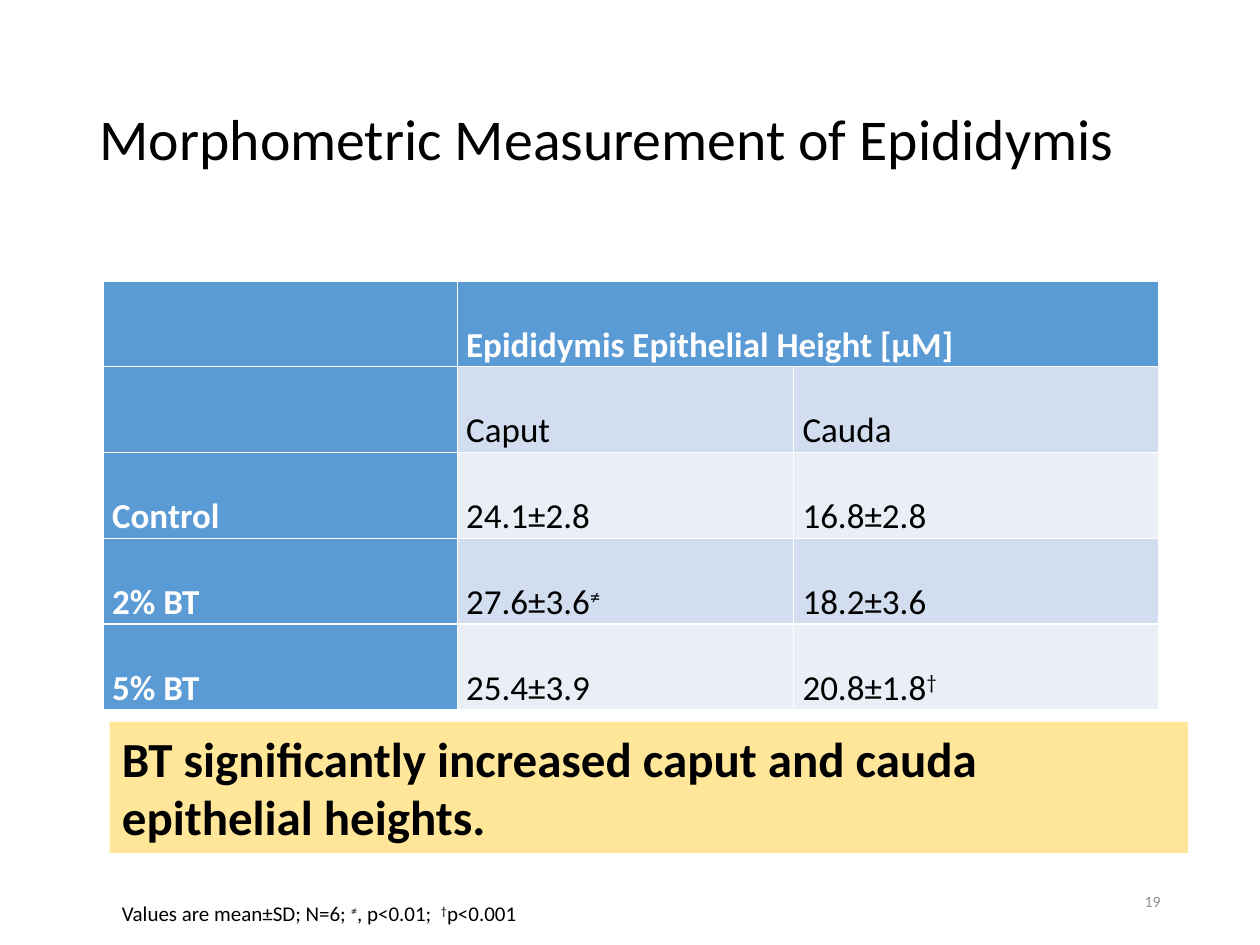
"""Build the slide on epididymis epithelial heights."""
from itertools import groupby

from pptx import Presentation
from pptx.dml.color import RGBColor
from pptx.enum.shapes import MSO_SHAPE
from pptx.enum.text import MSO_ANCHOR as Anchor, MSO_AUTO_SIZE as AutoSize, PP_ALIGN as Align
from pptx.util import Inches, Pt

TITLE = "Morphometric Measurement of Epididymis"
ROWS = [
    ["", "Epididymis Epithelial Height [µM]", ""],
    ["", "Caput", "Cauda"],
    ["Control", "24.1±2.8", "16.8±2.8"],
    ["2% BT", "27.6±3.6≠", "18.2±3.6"],
    ["5% BT", "25.4±3.9", "20.8±1.8†"],
]
CONCLUSION = "BT significantly increased caput and cauda epithelial heights."
FOOTNOTE = "Values are mean±SD; N=6; ≠, p<0.01;  †p<0.001"
PAGE_NUMBER = "19"
MARKS = "≠†"

COLUMN_WIDTHS = [2.81, 2.67, 2.9]
ROW_HEIGHT = 0.68
HEADING_FILL = "5B9BD5"
BAND_FILLS = ["EAEFF7", "D2DEEF"]


def rgb(value):
    """Turn a hex string into a colour."""
    return RGBColor.from_string(value)


def fill(part, value):
    """Give a shape or cell a solid fill."""
    part.fill.solid()
    part.fill.fore_color.rgb = rgb(value)


def write(frame, text, size, color="000000", bold=False, align=Align.LEFT,
          anchor=Anchor.TOP, spacing=1.0):
    """Write one paragraph, raising the significance marks."""
    frame.word_wrap = True
    frame.vertical_anchor = anchor
    paragraph = frame.paragraphs[0]
    paragraph.alignment = align
    paragraph.line_spacing = spacing
    for raised, letters in groupby(text, lambda letter: letter in MARKS):
        run = paragraph.add_run()
        run.text = "".join(letters)
        font = run.font
        font.name, font.size, font.bold = "Calibri", Pt(size), bold
        font.color.rgb = rgb(color)
        if raised:
            run._r.get_or_add_rPr().set("baseline", "30000")


def box(left, top, width, height):
    """Convert a position and size to lengths."""
    return [Inches(value) for value in (left, top, width, height)]


def add_heights(slide):
    """Add the table of epithelial heights."""
    place = box(0.82, 2.23, sum(COLUMN_WIDTHS), ROW_HEIGHT * len(ROWS))
    heights = slide.shapes.add_table(len(ROWS), len(COLUMN_WIDTHS), *place).table
    heights.first_col = True
    for column, width in zip(heights.columns, COLUMN_WIDTHS):
        column.width = Inches(width)
    for r, row in enumerate(ROWS):
        heights.rows[r].height = Inches(ROW_HEIGHT)
        for c, text in enumerate(row):
            cell = heights.cell(r, c)
            heading = r == 0 or c == 0
            fill(cell, HEADING_FILL if heading else BAND_FILLS[r % 2])
            cell.margin_left = cell.margin_right = Inches(0.07)
            cell.margin_top = cell.margin_bottom = 0
            if text:
                write(cell.text_frame, text, 20, bold=heading, align=Align.JUSTIFY,
                      color="FFFFFF" if heading else "000000", spacing=2.0)
    heights.cell(0, 1).merge(heights.cell(0, 2))


def main():
    """Assemble and save the slide."""
    deck = Presentation()
    deck.slide_width, deck.slide_height = Inches(10), Inches(7.5)
    slide = deck.slides.add_slide(deck.slide_layouts[5])
    shapes = slide.shapes

    title = shapes.title
    title.left, title.top, title.width, title.height = box(0.69, 0.4, 8.62, 1.45)
    title.text_frame.auto_size = AutoSize.NONE
    write(title.text_frame, TITLE, 33, anchor=Anchor.MIDDLE, spacing=0.9)

    add_heights(slide)

    page = shapes.add_textbox(*box(7.06, 6.95, 2.25, 0.4))
    write(page.text_frame, PAGE_NUMBER, 9, color="8C8C8C", align=Align.RIGHT,
          anchor=Anchor.MIDDLE)

    conclusion = shapes.add_shape(MSO_SHAPE.RECTANGLE, *box(0.87, 5.73, 8.56, 1.04))
    conclusion.shadow.inherit = False
    conclusion.line.fill.background()
    fill(conclusion, "FFE699")
    write(conclusion.text_frame, CONCLUSION, 28, bold=True)

    footnote = shapes.add_textbox(*box(0.87, 7.1, 7.93, 0.3))
    write(footnote.text_frame, FOOTNOTE, 12)

    deck.save("out.pptx")


if __name__ == "__main__":
    main()
